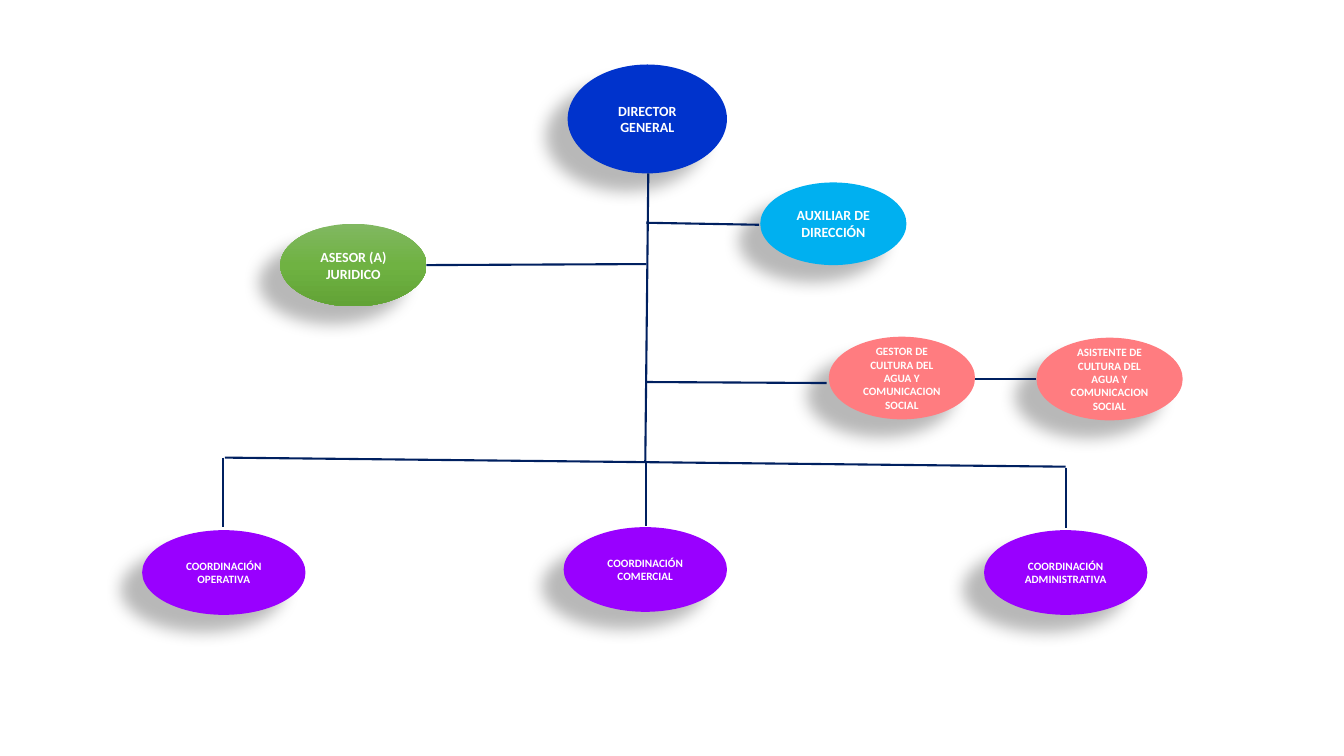
from pptx import Presentation
from pptx.dml.color import RGBColor
from pptx.enum.shapes import MSO_CONNECTOR, MSO_SHAPE
from pptx.enum.text import MSO_ANCHOR, PP_ALIGN
from pptx.oxml import parse_xml
from pptx.oxml.ns import nsdecls, qn
from pptx.util import Inches, Pt

ELLIPSE = MSO_SHAPE.OVAL
STRAIGHT = MSO_CONNECTOR.STRAIGHT
MIDDLE = MSO_ANCHOR.MIDDLE
CENTER = PP_ALIGN.CENTER

BLUE, SKY, CORAL, PURPLE = "0033CC", "00B0F0", "FF7C80", "9900FF"
GREEN = ["81B861", "6FB242", "62A336"]
NAVY, WHITE = "002060", "FFFFFF"


def rgb(value):
    return RGBColor.from_string(value)


class OrgChart:
    font = "Calibri"
    line_width = 1.5

    def __init__(self, s):
        self.s = s

    def node(self, text, x, y, w, h, fill, size):
        sp = self.s.shapes.add_shape(ELLIPSE, Inches(x), Inches(y), Inches(w), Inches(h))
        if isinstance(fill, list):
            self.gradient(sp, fill)
        else:
            sp.fill.solid()
            sp.fill.fore_color.rgb = rgb(fill)
        sp.line.fill.background()
        self.shadow(sp)
        tf = sp.text_frame
        tf.word_wrap = True
        tf.vertical_anchor = MIDDLE
        p = tf.paragraphs[0]
        p.alignment = CENTER
        r = p.add_run()
        r.text = text
        r.font.name = self.font
        r.font.size = Pt(size)
        r.font.bold = True
        r.font.color.rgb = rgb(WHITE)

    def gradient(self, sp, colors):
        sp.fill.gradient()
        sp.fill.gradient_angle = 270
        stops = sp._element.spPr.find(".//" + qn("a:gsLst"))
        for stop in list(stops):
            stops.remove(stop)
        for i, color in enumerate(colors):
            pos = 100000 * i // (len(colors) - 1)
            stops.append(parse_xml(
                f'<a:gs {nsdecls("a")} pos="{pos}"><a:srgbClr val="{color}"/></a:gs>'))

    def shadow(self, sp):
        sp.shadow.inherit = False
        sp._element.spPr.find(qn("a:effectLst")).append(parse_xml(
            f'<a:outerShdw {nsdecls("a")} blurRad="{Pt(11.8)}" dist="{Pt(19.7)}" '
            f'dir="{141 * 60000}" algn="ctr" rotWithShape="0">'
            '<a:srgbClr val="000000"><a:alpha val="28000"/></a:srgbClr></a:outerShdw>'))

    def link(self, x1, y1, x2, y2):
        c = self.s.shapes.add_connector(
            STRAIGHT, Inches(x1), Inches(y1), Inches(x2), Inches(y2))
        c.line.color.rgb = rgb(NAVY)
        c.line.width = Pt(self.line_width)
        c._element.spPr.append(parse_xml(f'<a:effectLst {nsdecls("a")}/>'))


def main():
    prs = Presentation()
    prs.slide_width, prs.slide_height = Inches(13.33), Inches(7.5)
    chart = OrgChart(prs.slides.add_slide(prs.slide_layouts[6]))

    # Director
    chart.node("DIRECTOR GENERAL", 5.63, 0.64, 1.58, 1.08, BLUE, 10)

    # Staff positions
    for text, x, y, fill, size in [
        ("AUXILIAR DE DIRECCIÓN", 7.54, 1.81, SKY, 10),
        ("ASISTENTE DE CULTURA DEL AGUA Y COMUNICACION SOCIAL", 10.28, 3.35, CORAL, 8),
        ("ASESOR (A) JURIDICO", 2.78, 2.22, GREEN, 10),
        ("GESTOR DE CULTURA DEL AGUA Y COMUNICACION SOCIAL", 8.22, 3.34, CORAL, 8),
    ]:
        chart.node(text, x, y, 1.45, 0.82, fill, size)

    # Coordination areas
    for area, x, y in [("COMERCIAL", 5.59, 5.23), ("ADMINISTRATIVA", 9.76, 5.26),
                       ("OPERATIVA", 1.41, 5.26)]:
        chart.node(f"COORDINACIÓN {area}", x, y, 1.62, 0.84, PURPLE, 8)

    # Trunk, staff branches, crossbar and drops
    for ends in [
        (6.43, 1.72, 6.4, 4.58),
        (6.4, 3.79, 8.2, 3.8),
        (6.41, 2.21, 7.53, 2.23),
        (4.23, 2.63, 6.41, 2.62),
        (10.28, 3.76, 9.67, 3.76),
        (2.23, 4.54, 10.57, 4.63),
        (10.57, 4.64, 10.57, 5.24),
        (6.41, 4.59, 6.41, 5.22),
        (2.21, 4.54, 2.21, 5.23),
    ]:
        chart.link(*ends)

    prs.save("out.pptx")


if __name__ == "__main__":
    main()
